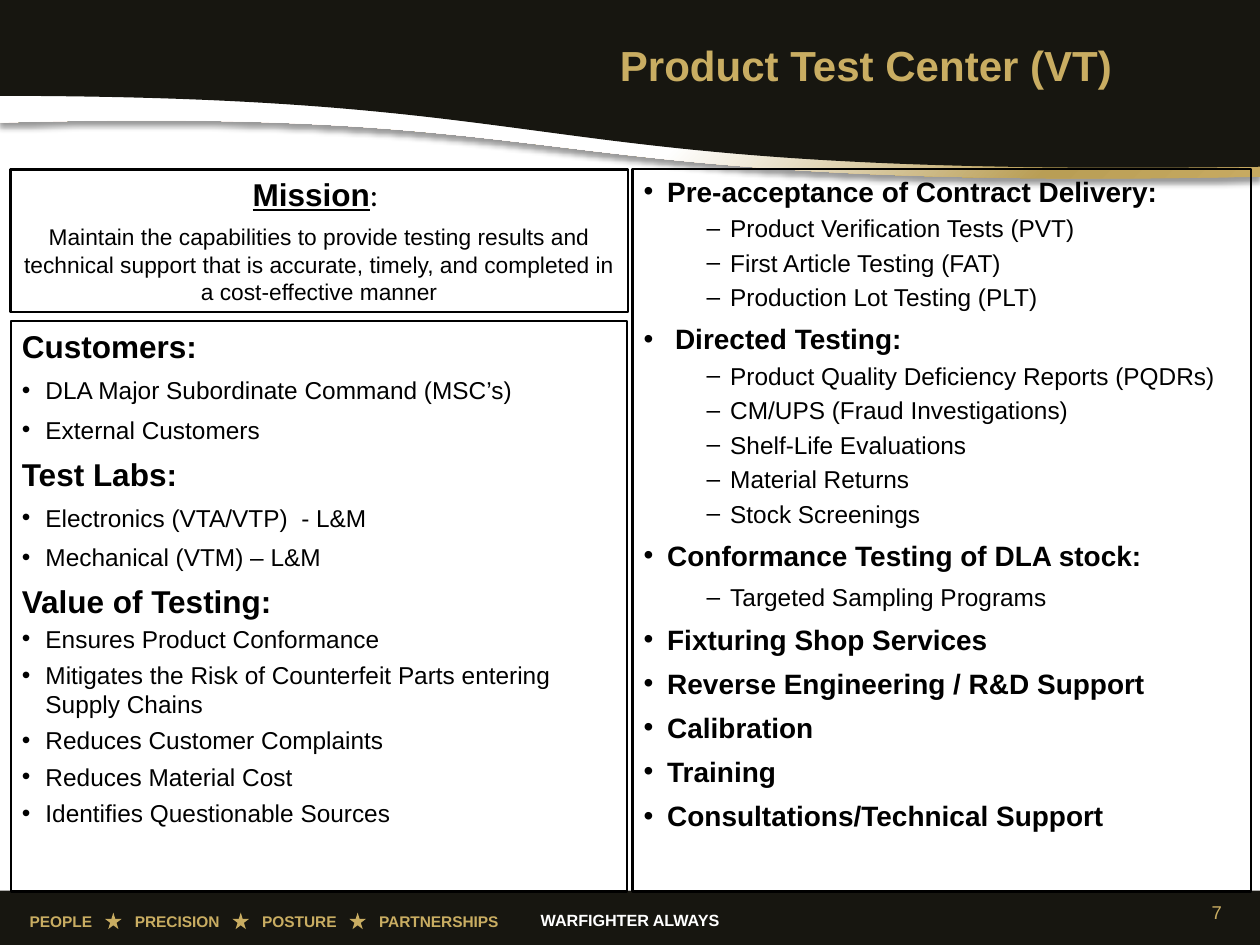
"""Build the Product Test Center slide with its swoosh header, three panels and footer."""
import lxml.etree
import pptx
import pptx.dml.color
import pptx.enum.shapes
import pptx.enum.text
import pptx.oxml.ns
import pptx.util

Cm = pptx.util.Cm
Pt = pptx.util.Pt
ALIGN = pptx.enum.text.PP_ALIGN
SHAPES = pptx.enum.shapes.MSO_SHAPE
qn = pptx.oxml.ns.qn

WIDTH, HEIGHT = 28.78, 21.59
COLOURS = {"dark": "171610", "gold": "C9AD62", "white": "FFFFFF", "black": "000000",
           "deep gold": "B99E55", "light gold": "C7AA61"}

STYLE_FIELDS = ("size", "bold", "margin", "hanging", "before", "after", "bullet")
STYLES = {
    "heading": (20.4, True, 0.97, 0.97, 6.8, 0, None),
    "item": (15.8, False, 0.54, 0.54, 6.8, 0, "•"),
    "tight item": (15.8, False, 0.54, 0.54, 2.3, 2.3, "•"),
    "service": (18.1, True, 0.54, 0.54, 3.4, 3.4, "•"),
    "wide service": (18.1, True, 0.72, 0.72, 3.4, 3.4, "•"),
    "test": (15.8, False, 1.98, 0.54, 0, 3.4, "‒"),
    "spaced test": (15.8, False, 1.98, 0.54, 3.4, 3.4, "‒"),
}
OVERVIEW = [
    ("heading", ["Customers:"]),
    ("item", ["DLA Major Subordinate Command (MSC’s)", "External Customers"]),
    ("heading", ["Test Labs:"]),
    ("item", ["Electronics (VTA/VTP)  - L&M", "Mechanical (VTM) – L&M"]),
    ("heading", ["Value of Testing:"]),
    ("tight item", ["Ensures Product Conformance",
                    "Mitigates the Risk of Counterfeit Parts entering Supply Chains",
                    "Reduces Customer Complaints", "Reduces Material Cost",
                    "Identifies Questionable Sources"]),
]
SERVICES = [
    ("service", ["Pre-acceptance of Contract Delivery:"]),
    ("test", ["Product Verification Tests (PVT)", "First Article Testing (FAT)",
              "Production Lot Testing (PLT)"]),
    ("wide service", ["Directed Testing:"]),
    ("test", ["Product Quality Deficiency Reports (PQDRs)", "CM/UPS (Fraud Investigations)",
              "Shelf-Life Evaluations", "Material Returns", "Stock Screenings"]),
    ("service", ["Conformance Testing of DLA stock:"]),
    ("spaced test", ["Targeted Sampling Programs"]),
    ("service", ["Fixturing Shop Services", "Reverse Engineering / R&D Support", "Calibration",
                 "Training", "Consultations/Technical Support"]),
]
PILLARS = {"PEOPLE": 0, "PRECISION": 2.4, "POSTURE": 5.31, "PARTNERSHIPS": 7.98}


def colour(name):
    """Return a named colour."""
    return pptx.dml.color.RGBColor.from_string(COLOURS[name])


def add_child(parent, tag, **attributes):
    """Append a drawing element with the given attributes."""
    child = lxml.etree.SubElement(parent, qn(tag))
    for name, value in attributes.items():
        child.set(name, str(value))
    return child


def format_run(run, size, bold=False, ink="black", font="Arial"):
    """Set the font of a run."""
    run.font.name = font
    run.font.size = Pt(size)
    run.font.bold = bold
    run.font.color.rgb = colour(ink)


def add_label(slide, box, text, size, ink, align, bold=True):
    """Add a one-line text box."""
    label = slide.shapes.add_textbox(*map(Cm, box))
    frame = label.text_frame
    frame.word_wrap = True
    frame.text = text
    frame.paragraphs[0].alignment = align
    format_run(frame.paragraphs[0].runs[0], size, bold, ink)
    return label


def paint(shape, fill):
    """Give a shape a plain fill with no outline or shadow."""
    shape.shadow.inherit = False
    shape.fill.solid()
    shape.fill.fore_color.rgb = colour(fill)
    shape.line.fill.background()
    return shape


def add_solid(slide, kind, box, fill):
    """Add a plain preset shape."""
    return paint(slide.shapes.add_shape(kind, *map(Cm, box)), fill)


def add_swoosh(slide, box, curve):
    """Add a band whose lower edge is a cubic curve, given relative to its box."""
    left, top, width = box
    corners = [(Cm(left + x), Cm(top + y)) for x, y in (curve[0], curve[-1], (width, 0))]
    builder = slide.shapes.build_freeform(Cm(left), Cm(top), scale=1.0)
    builder.add_line_segments(corners, close=True)
    shape = builder.convert_to_shape()
    edge = list(shape._element.iter(qn("a:lnTo")))[1]
    bend = lxml.etree.Element(qn("a:cubicBezTo"))
    for x, y in curve[1:]:
        add_child(bend, "a:pt", x=Cm(x), y=Cm(y))
    edge.getparent().replace(edge, bend)
    return paint(shape, "dark")


def gild(shape):
    """Give a shape the white-to-gold gradient and a soft shadow below."""
    shape.fill.gradient()
    gradient = shape._element.spPr.find(qn("a:gradFill"))
    for child in list(gradient):
        gradient.remove(child)
    stops = add_child(gradient, "a:gsLst")
    for position, name in ((55, "white"), (84, "deep gold"), (100, "light gold")):
        stop = add_child(stops, "a:gs", pos=position * 1000)
        add_child(stop, "a:srgbClr", val=COLOURS[name])
    circle = add_child(gradient, "a:path", path="circle")
    add_child(circle, "a:fillToRect", r=100000, b=100000)
    effects = shape._element.spPr.find(qn("a:effectLst"))
    shadow = add_child(effects, "a:outerShdw", blurRad=Pt(4), dist=Pt(3), dir=5400000,
                       algn="t", rotWithShape=0)
    add_child(add_child(shadow, "a:srgbClr", val=COLOURS["black"]), "a:alpha", val=40000)


def add_header(slide, box):
    """Add the two swooshes and the title."""
    left, top, width = box
    gild(add_swoosh(slide, (left, top + 1.5, width),
                    [(0, 1.3), (13.94, 0.92), (11.53, 2.87), (width, 2.54)]))
    add_swoosh(slide, box, [(0, 2.19), (13.87, 2.21), (11.48, 4.06), (width, 3.81)])
    add_label(slide, (left + 11.77, top + 0.78, 16.03, 2.39), "Product Test Center (VT)",
              27.2, "gold", ALIGN.CENTER)


def add_footer(slide, box):
    """Add the dark bar with the motto, its stars and the slide number."""
    left, top, width, height = box
    add_solid(slide, SHAPES.RECTANGLE, box, "dark")
    add_label(slide, (left + 11.36, top + 0.33, 6.07, 0.71), "WARFIGHTER ALWAYS",
              10.5, "white", ALIGN.CENTER)
    motto = add_label(slide, (left + 0.43, top + 0.37, 11.71, 0.71), "\t".join(PILLARS),
                      10, "gold", ALIGN.LEFT)
    tabs = add_child(motto.text_frame.paragraphs[0]._p.get_or_add_pPr(), "a:tabLst")
    for offset in list(PILLARS.values())[1:]:
        add_child(tabs, "a:tab", pos=Cm(offset), algn="l")
        add_solid(slide, SHAPES.STAR_5_POINT, (left + offset, top + 0.5, 0.38, 0.38), "gold")
    number = add_label(slide, (left + 19.63, top - 0.08, 8.53, 1.14), "7",
                       12, "gold", ALIGN.RIGHT, bold=False)
    number.text_frame.vertical_anchor = pptx.enum.text.MSO_ANCHOR.MIDDLE


def add_panel(slide, box):
    """Add an outlined panel and return its text frame."""
    panel = slide.shapes.add_shape(SHAPES.RECTANGLE, *map(Cm, box))
    panel.shadow.inherit = False
    panel.fill.background()
    panel.line.color.rgb = colour("black")
    panel.line.width = Pt(1.5)
    panel.text_frame.word_wrap = True
    panel.text_frame.vertical_anchor = pptx.enum.text.MSO_ANCHOR.TOP
    return panel.text_frame


def add_mission(slide, box):
    """Add the centred mission statement."""
    frame = add_panel(slide, box)
    heading, statement = frame.paragraphs[0], frame.add_paragraph()
    heading.text = "Mission"
    format_run(heading.runs[0], 20.4, True)
    heading.runs[0].font.underline = True
    colon = heading.add_run()
    colon.text = ": "
    format_run(colon, 20.4, font="Calibri")
    heading.space_after = Pt(6.8)
    statement.text = ("Maintain the capabilities to provide testing results and technical support "
                      "that is accurate, timely, and completed in a cost-effective manner")
    format_run(statement.runs[0], 14.7)
    heading.alignment = statement.alignment = ALIGN.CENTER


def add_list(slide, box, groups):
    """Add a panel of styled headings and bullets."""
    frame = add_panel(slide, box)
    lines = [(name, text) for name, texts in groups for text in texts]
    for index, (name, text) in enumerate(lines):
        style = dict(zip(STYLE_FIELDS, STYLES[name]))
        paragraph = frame.add_paragraph() if index else frame.paragraphs[0]
        paragraph.text = text
        paragraph.alignment = ALIGN.LEFT
        paragraph.level = 1 if style["bullet"] == "‒" else 0
        paragraph.space_before = Pt(style["before"] if index else 0)
        paragraph.space_after = Pt(style["after"])
        properties = paragraph._p.get_or_add_pPr()
        properties.set("marL", str(Cm(style["margin"])))
        properties.set("indent", str(-Cm(style["hanging"])))
        if style["bullet"]:
            add_child(properties, "a:buFont", typeface="Arial")
            add_child(properties, "a:buChar", char=style["bullet"])
        format_run(paragraph.runs[0], style["size"], style["bold"])


def main():
    """Build and save the slide."""
    presentation = pptx.Presentation()
    presentation.slide_width, presentation.slide_height = Cm(WIDTH), Cm(HEIGHT)
    slide = presentation.slides.add_slide(presentation.slide_layouts[6])
    add_header(slide, (0, 0, WIDTH))
    add_footer(slide, (0, 20.35, WIDTH, HEIGHT - 20.35))
    add_mission(slide, (0.24, 3.87, 14.1, 3.26))
    add_list(slide, (0.25, 7.34, 14.07, 13.03), OVERVIEW)
    add_list(slide, (14.45, 3.86, 14.12, 16.51), SERVICES)
    presentation.save("out.pptx")


if __name__ == "__main__":
    main()
